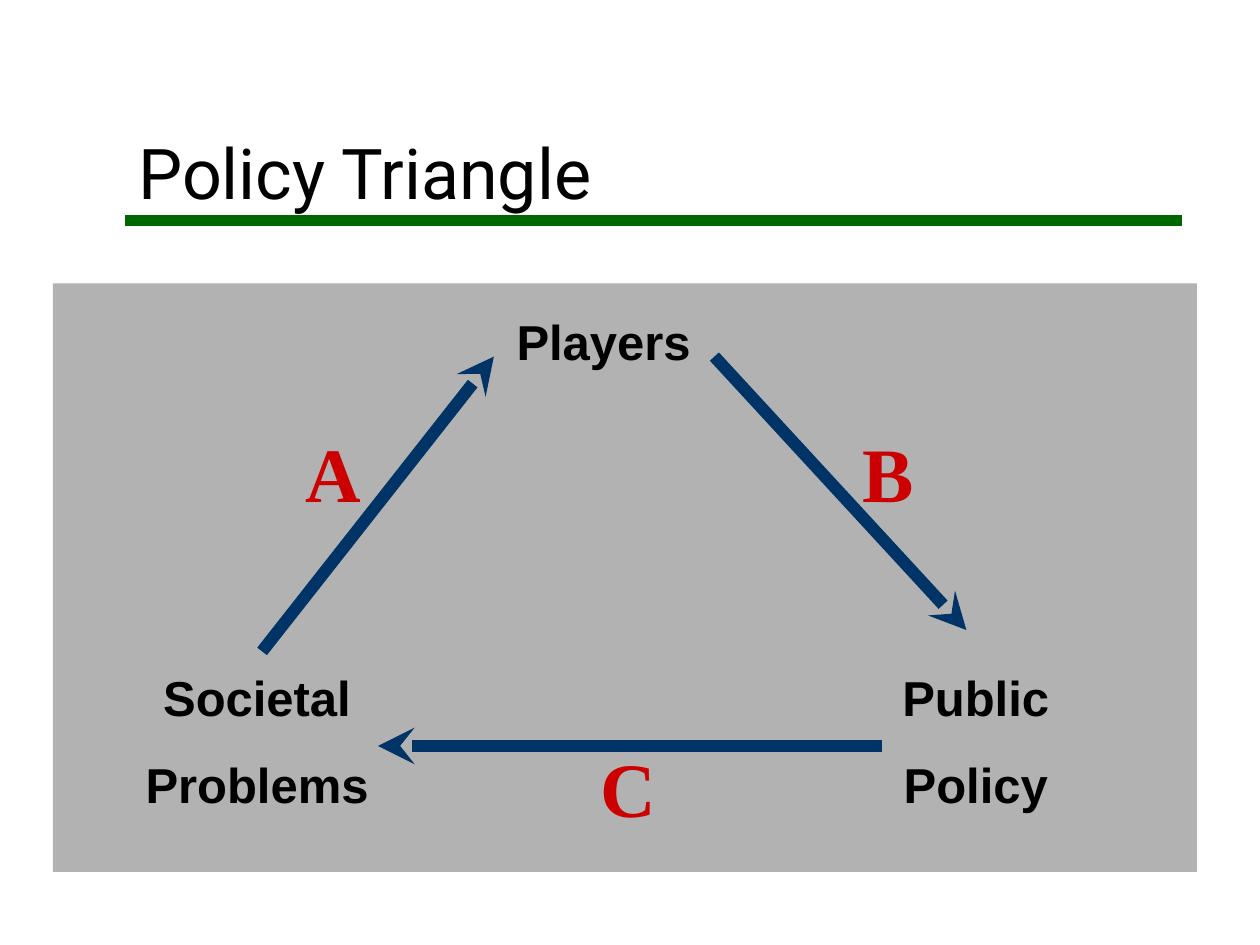
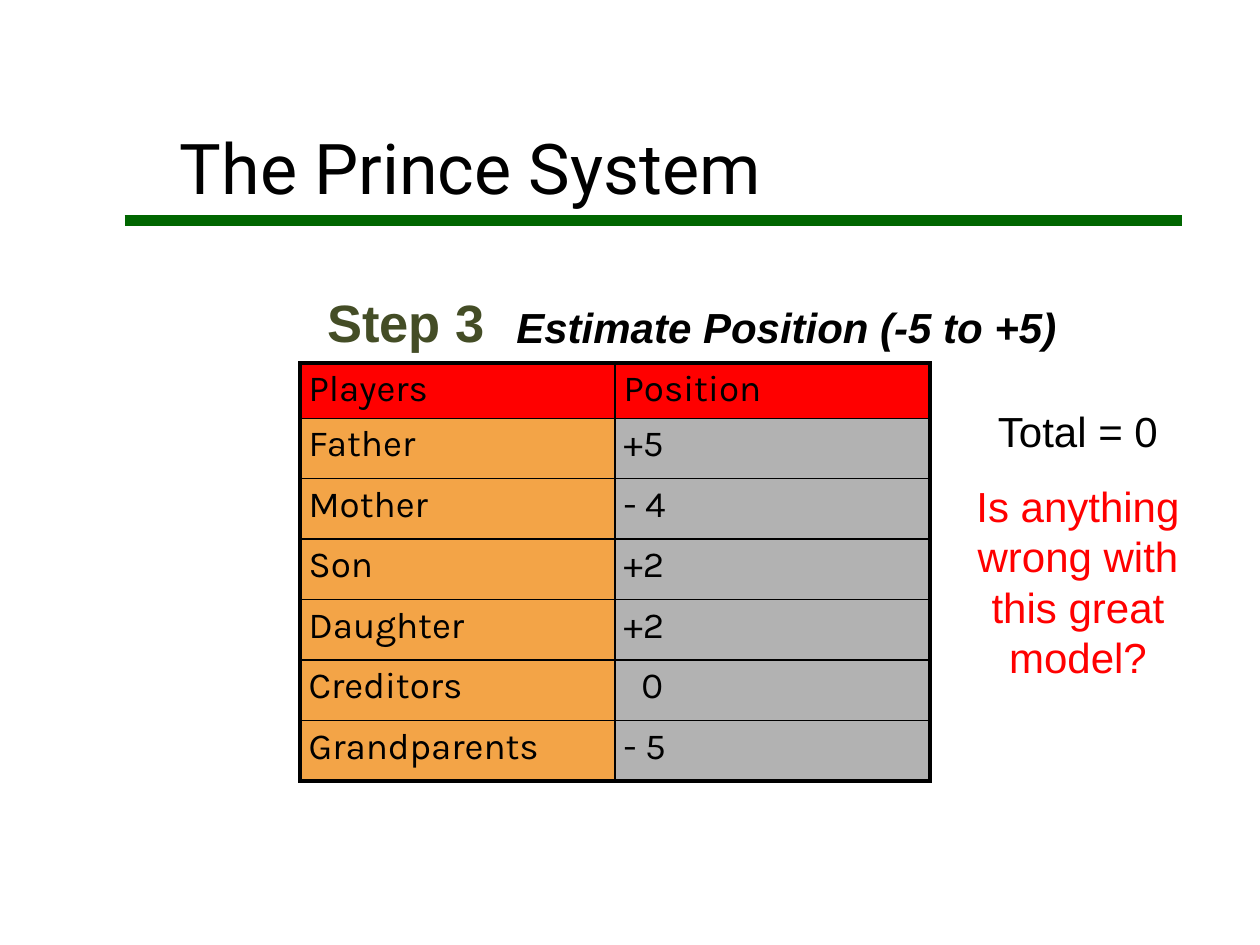
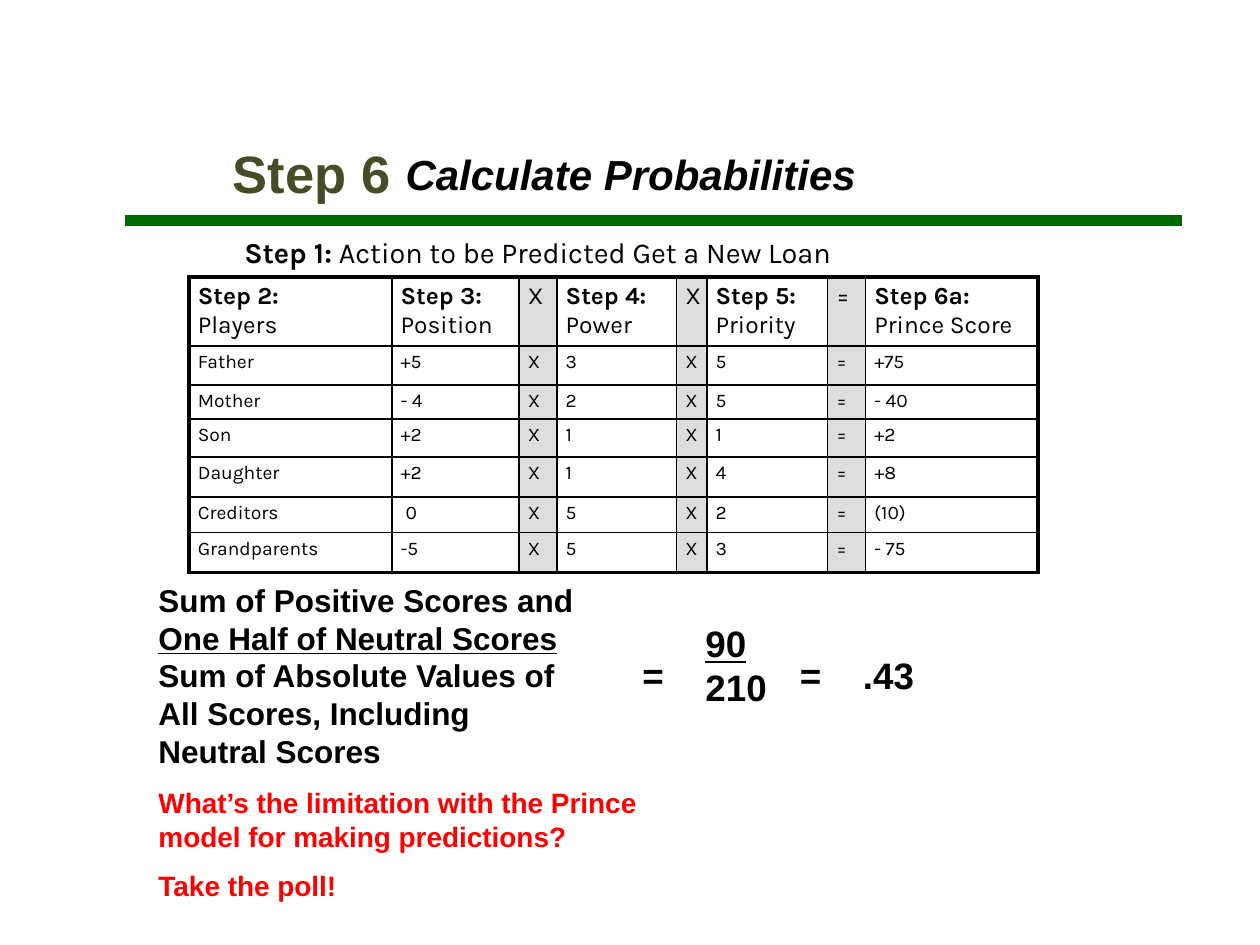
import copy

import lxml.etree
import pptx
import pptx.dml.color
import pptx.enum.shapes
import pptx.enum.text
import pptx.oxml.ns
import pptx.util

Inches = pptx.util.Inches
Pt = pptx.util.Pt
qn = pptx.oxml.ns.qn
CENTER = pptx.enum.text.PP_ALIGN.CENTER
BOTTOM = pptx.enum.text.MSO_ANCHOR.BOTTOM

COLORS = {
    "black": "000000", "rule": "006600", "panel": "B2B2B2", "arrow": "003366",
    "letter": "CC0000", "olive": "444D26", "red": "FF0000", "orange": "F3A447",
    "operator": "DDDDDD",
}
RGB = {name: pptx.dml.color.RGBColor.from_string(value) for name, value in COLORS.items()}

STYLES = {
    "title": {"name": "Roboto", "size": 40, "color": "black"},
    "step": {"name": "Arial", "size": 30, "color": "olive", "bold": True},
    "step_name": {"name": "Arial", "size": 24, "color": "black", "bold": True, "italic": True},
    "corner": {"name": "Arial", "size": 28, "color": "black", "bold": True},
    "letter": {"name": "Times New Roman", "size": 44, "color": "letter", "bold": True},
    "remark": {"name": "Arial", "size": 24, "color": "black"},
    "formula": {"name": "Arial", "size": 18, "color": "black", "bold": True},
    "result": {"name": "Arial", "size": 21, "color": "black", "bold": True},
    "action": {"name": "Karla", "size": 16.5, "color": "black"},
    "position_cell": {"name": "Karla", "size": 21, "color": "black"},
    "score_head": {"name": "Karla", "size": 14, "color": "black"},
    "score_cell": {"name": "Karla", "size": 11, "color": "black"},
}


def write_text(text_frame, paragraphs, style, align=None):
    """Fill a frame; each paragraph is a list of (text, format changes) runs."""
    for index, runs in enumerate(paragraphs):
        paragraph = text_frame.paragraphs[0] if index == 0 else text_frame.add_paragraph()
        paragraph.alignment = align
        for text, changes in runs:
            formats = {**STYLES[style], **changes}
            for line_index, line in enumerate(text.split("\n")):
                if line_index:
                    paragraph.add_line_break()
                if not line:
                    continue
                run = paragraph.add_run()
                run.text = line
                for key, value in formats.items():
                    if key == "color":
                        run.font.color.rgb = RGB[value]
                    else:
                        setattr(run.font, key, Pt(value) if key == "size" else value)
        if index:
            paragraph.space_before = Pt(round(0.57 * formats["size"]))
        # A line break takes the size of the run before it
        for line_break in paragraph._p.findall(qn("a:br")):
            line_break.append(copy.deepcopy(line_break.getprevious().find(qn("a:rPr"))))


def add_text(slide, place, paragraphs, style, align=None, wrap=True):
    text_box = slide.shapes.add_textbox(*[Inches(length) for length in place])
    text_frame = text_box.text_frame
    text_frame.word_wrap = wrap
    if isinstance(paragraphs, str):
        paragraphs = [[(paragraphs, {})]]
    write_text(text_frame, paragraphs, style, align)
    if style == "title":
        text_frame.vertical_anchor = BOTTOM
        text_frame.paragraphs[0].line_spacing = 0.9


presentation = pptx.Presentation()
presentation.slide_width = Inches(10)
presentation.slide_height = Inches(7.5)
triangle, position, probability = slides = [
    presentation.slides.add_slide(presentation.slide_layouts[6]) for _ in range(3)
]

# Panel behind the triangle, then the title rules and the arrows
panel = triangle.shapes.add_shape(
    pptx.enum.shapes.MSO_SHAPE.RECTANGLE, Inches(0.42), Inches(2.25), Inches(9.08), Inches(4.67))
panel.shadow.inherit = False
panel.fill.solid()
panel.fill.fore_color.rgb = RGB["panel"]
panel.line.fill.background()

lines = [(slide, (0.99, 1.75, 9.38, 1.75), "rule", 6) for slide in slides]
for ends in [(2.08, 5.17, 3.92, 2.83), (5.67, 2.83, 7.67, 5), (7, 5.92, 3, 5.92)]:
    lines.append((triangle, ends, "arrow", 7))
for slide, ends, color, width in lines:
    connector = slide.shapes.add_connector(
        pptx.enum.shapes.MSO_CONNECTOR.STRAIGHT, *[Inches(length) for length in ends])
    connector.line.color.rgb = RGB[color]
    connector.line.width = Pt(width)
    if color == "arrow":
        lxml.etree.SubElement(connector.line._get_or_add_ln(), qn("a:tailEnd"), type="stealth")
    lxml.etree.SubElement(connector._element.spPr, qn("a:effectLst"))

# Slide 1: policy triangle
add_text(triangle, (1, 0.3, 5.83, 1.45), "Policy Triangle", "title")
for place, words in [
    ((3.75, 2.42, 2.08, 0.57), ["Players"]),
    ((0.83, 5.25, 2.42, 1.27), ["Societal", "Problems"]),
    ((6.08, 5.25, 3.33, 1.27), ["Public", "Policy"]),
]:
    add_text(triangle, place, [[(word, {})] for word in words], "corner", CENTER)
for letter, left, top in [("A", 2.33, 3.33), ("B", 6.75, 3.33), ("C", 4.67, 5.83)]:
    add_text(triangle, (left, top, 0.75, 0.83), letter, "letter")

# Slide 2: positions of the players
add_text(position, (1.33, 0.77, 6.38, 0.94), "The Prince System", "title")
add_text(position, (2.5, 2.25, 1.5, 0.61), "Step 3", "step")
add_text(position, (4, 2.34, 4.53, 0.5), "Estimate Position (-5 to +5)", "step_name", wrap=False)
add_text(position, (7.41, 3.17, 2.29, 2.32), [
    [("Total = 0", {})],
    [("Is anything wrong with this great model?", {"color": "red"})],
], "remark", CENTER)

# Slide 3: probabilities
add_text(probability, (1.75, 1.07, 1.46, 0.61), "Step 6", "step", wrap=False)
add_text(probability, (3.12, 1.13, 3.81, 0.5), "Calculate Probabilities", "step_name", wrap=False)
add_text(probability, (1.84, 1.81, 6.81, 0.38), [
    [("Step 1:", {"bold": True}), (" Action to be Predicted Get a New Loan", {})],
], "action")
add_text(probability, (1.16, 4.56, 4.46, 2.69), [
    [("Sum of Positive Scores and\n", {}),
     ("One Half of Neutral Scores\n", {"underline": True}),
     ("Sum of Absolute Values of\nAll Scores, Including\nNeutral Scores", {})],
    [("What’s the limitation with the Prince model for making predictions?",
      {"size": 16, "color": "red"})],
    [("Take the poll!", {"size": 16, "color": "red"})],
], "formula")
add_text(probability, (5.5, 4.88, 0.69, 0.81),
         [[("90\n", {"underline": True}), ("210", {})]], "result", wrap=False)
for text, left, width in [("=", 5, 0.44), ("=", 6.25, 0.37), (".43", 6.75, 0.75)]:
    add_text(probability, (left, 5.13, width, 0.45), text, "result", wrap=False)

# Tables of both slides
players = ["Father", "Mother", "Son", "Daughter", "Creditors", "Grandparents"]
positions = ["+5", "- 4", "+2", "+2", "0", "- 5"]
scores = [
    ("+5", "3", "5", "+75"), ("- 4", "2", "5", "- 40"), ("+2", "1", "1", "+2"),
    ("+2", "1", "4", "+8"), ("0", "5", "2", "(10)"), ("-5", "5", "3", "- 75"),
]
score_rows = [["Step 2:\nPlayers", "Step 3:\nPosition", "X", "Step 4: Power", "X",
               "Step 5: Priority", "=", "Step 6a:\nPrince Score"]]
for player, (stance, power, priority, score) in zip(players, scores):
    score_rows.append([player, stance, "X", power, "X", priority, "=", score])

tables = [
    {"slide": position, "at": (2.38, 2.88), "columns": [2.5, 2.5], "heights": [0.44] + [0.48] * 6,
     "rows": [["Players", "Position"], *zip(players, positions)],
     "styles": ("position_cell", "position_cell"), "head_fill": "red",
     "fills": ["orange", "panel"], "zero_indent": 0.14},
    {"slide": probability, "at": (1.5, 2.2),
     "columns": [1.61, 1.01, 0.3, 0.95, 0.24, 0.96, 0.3, 1.37],
     "heights": [0.52, 0.31, 0.27, 0.3, 0.32, 0.28, 0.32], "rows": score_rows,
     "styles": ("score_head", "score_cell"), "head_fill": None,
     "fills": [None, None, "operator", None, "operator", None, "operator", None],
     "zero_indent": 0.04},
]
for grid in tables:
    widths, heights, rows = grid["columns"], grid["heights"], grid["rows"]
    size = (*grid["at"], sum(widths), sum(heights))
    table = grid["slide"].shapes.add_table(
        len(rows), len(widths), *[Inches(length) for length in size]).table
    table.first_row = table.horz_banding = False
    for column, width in zip(table.columns, widths):
        column.width = Inches(width)
    for row_index, texts in enumerate(rows):
        table.rows[row_index].height = Inches(heights[row_index])
        for column_index, text in enumerate(texts):
            cell = table.cell(row_index, column_index)
            indent = grid["zero_indent"] if text == "0" else 0
            cell.margin_left = Inches(0.07 + indent)
            cell.margin_right = Inches(0.07)
            cell.margin_top = cell.margin_bottom = Inches(0.04)
            step, colon, rest = text.partition(":")
            runs = [(step + colon, {"bold": True}), (rest, {})] if colon else [(text, {})]
            write_text(cell.text_frame, [runs], grid["styles"][row_index > 0])

            outer_edges = {
                "a:lnL": column_index == 0, "a:lnR": column_index == len(widths) - 1,
                "a:lnT": row_index == 0, "a:lnB": row_index == len(rows) - 1,
            }
            properties = cell._tc.get_or_add_tcPr()
            for tag, is_outer in outer_edges.items():
                border = lxml.etree.SubElement(
                    properties, qn(tag), w=str(Pt(2.25 if is_outer else 1)))
                fill = lxml.etree.SubElement(border, qn("a:solidFill"))
                lxml.etree.SubElement(fill, qn("a:srgbClr"), val=COLORS["black"])
            color = grid["fills"][column_index]
            if row_index == 0 and grid["head_fill"]:
                color = grid["head_fill"]
            if color:
                cell.fill.solid()
                cell.fill.fore_color.rgb = RGB[color]
            else:
                cell.fill.background()

presentation.save("out.pptx")
